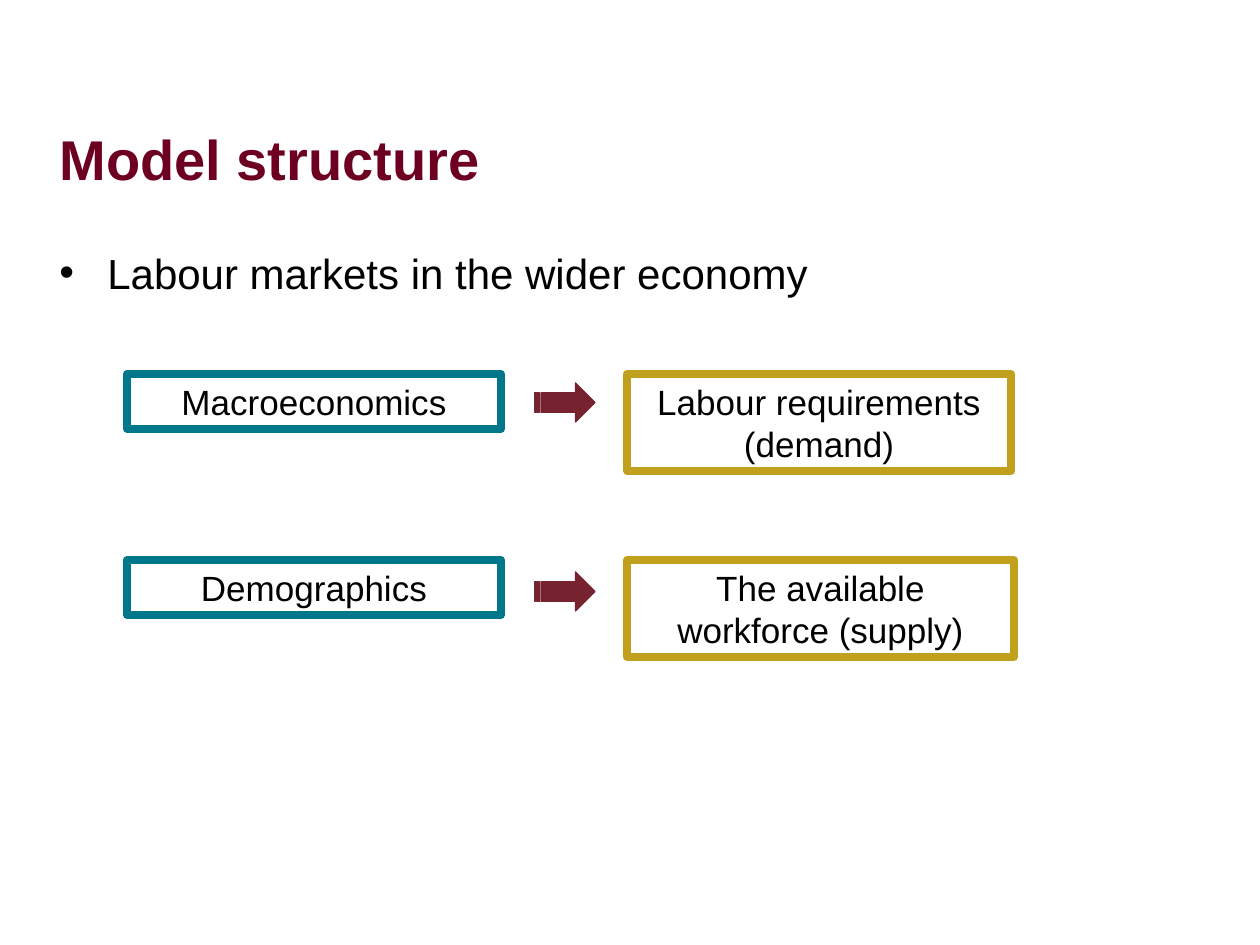
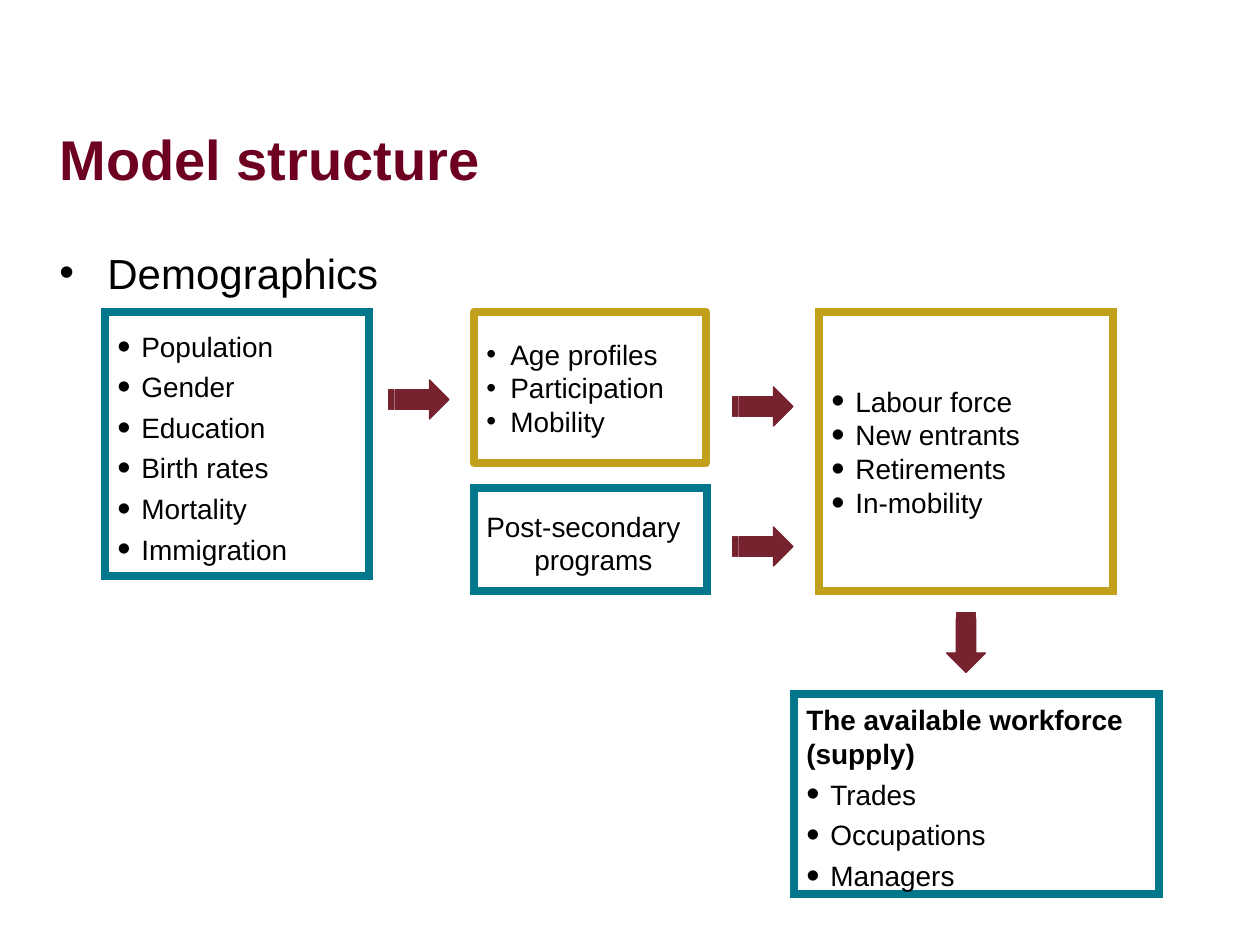
import pptx
import pptx.util
import pptx.dml.color
import pptx.enum.shapes
import pptx.enum.text
import pptx.oxml.ns
from lxml import etree

COLORS = {"title": "6D0020", "text": "000000", "arrow": "76232F",
          "teal": "00778B", "gold": "C1A01E", "white": "FFFFFF"}
FONT = "Arial"
EMU_PER_PX = 914400 / 126
ARROW_W, ARROW_H = 60, 39
TITLE_BOX = (47, 79, 1134, 158)
BODY_BOX = (47, 241, 1134, 619)
BIG_BULLET = {"indent": 24, "bullet": 135}
TIGHT_BULLET = {"indent": 24, "bullet": 100, "spacing": 0.8}
TIGHT_BIG_BULLET = {**BIG_BULLET, "spacing": 0.8}
CENTERED = {"align": pptx.enum.text.PP_ALIGN.CENTER}


def items(style, *texts):
    return [(text, style) for text in texts]


def label(box, color, text):
    return {"box": box, "color": color, "size": 20, "paras": items(CENTERED, text),
            "grow": True}


def panel(box, color, paras, miter=True):
    return {"box": box, "color": color, "size": 16, "paras": paras, "miter": miter}


SLIDES = [
    {"title": "Model structure",
     "topic": "Labour markets in the wider economy",
     "arrows": [(535, 383, 0), (535, 572, 0)],
     "boxes": [
         label((127, 374, 374, 55), "teal", "Macroeconomics"),
         label((127, 560, 374, 55), "teal", "Demographics"),
         label((627, 374, 384, 97), "gold", "Labour requirements (demand)"),
         label((627, 560, 387, 97), "gold", "The available workforce (supply)"),
     ]},
    {"title": "Model structure",
     "topic": "Demographics",
     "arrows": [(389, 380, 0), (733, 387, 0), (733, 527, 0), (936, 623, 90)],
     "boxes": [
         panel((105, 312, 264, 264), "teal",
               items(BIG_BULLET, "Population", "Gender", "Education",
                     "Birth rates", "Mortality", "Immigration")),
         panel((474, 312, 232, 151), "gold",
               items(TIGHT_BULLET, "Age profiles", "Participation", "Mobility"),
               miter=False),
         panel((819, 312, 294, 279), "gold",
               items(TIGHT_BIG_BULLET, "Labour force", "New entrants",
                     "Retirements", "In-mobility")),
         panel((474, 488, 233, 103), "teal",
               items({"indent": 48}, "Post-secondary programs")),
         panel((794, 694, 365, 200), "teal",
               items({"bold": True}, "The available workforce (supply)")
               + items(BIG_BULLET, "Trades", "Occupations", "Managers")),
     ]},
]


def px(n):
    return pptx.util.Emu(round(n * EMU_PER_PX))


def rgb(name):
    return pptx.dml.color.RGBColor.from_string(COLORS[name])


def add_element(parent, tag, **attrs):
    return etree.SubElement(parent, pptx.oxml.ns.qn(tag), **attrs)


def add_bullet(pPr, percent):
    clr = add_element(pPr, "a:buClr")
    add_element(clr, "a:srgbClr", val=COLORS["text"])
    add_element(pPr, "a:buSzPct", val=str(percent * 1000))
    add_element(pPr, "a:buFont", typeface=FONT)
    add_element(pPr, "a:buChar", char="•")


def write(tf, paras, size, color="text"):
    for i, (text, style) in enumerate(paras):
        p = tf.add_paragraph() if i else tf.paragraphs[0]
        pPr = p._p.get_or_add_pPr()
        indent = style.get("indent", 0)
        pPr.set("marL", str(px(indent)))
        pPr.set("indent", str(px(-indent)))
        if "bullet" in style:
            add_bullet(pPr, style["bullet"])
        p.alignment = style.get("align", pptx.enum.text.PP_ALIGN.LEFT)
        p.line_spacing = style.get("spacing", 1.0)
        p.space_before = pptx.util.Pt(4 if i else 0)
        r = p.add_run()
        r.text = text
        r.font.name = FONT
        r.font.size = pptx.util.Pt(size)
        r.font.bold = style.get("bold", False)
        r.font.color.rgb = rgb(color)


def add_header(s, title, topic):
    sp = s.shapes.title
    sp.left, sp.top, sp.width, sp.height = map(px, TITLE_BOX)
    sp.text_frame.vertical_anchor = pptx.enum.text.MSO_ANCHOR.MIDDLE
    write(sp.text_frame, items({"bold": True}, title), 32, "title")
    tf = s.shapes.add_textbox(*map(px, BODY_BOX)).text_frame
    tf.word_wrap = True
    write(tf, items({"indent": 48, "bullet": 100}, topic), 24)


def add_arrow(s, x, y, rotation):
    kind = pptx.enum.shapes.MSO_SHAPE.STRIPED_RIGHT_ARROW
    sp = s.shapes.add_shape(kind, px(x), px(y), px(ARROW_W), px(ARROW_H))
    sp.rotation = rotation
    sp.shadow.inherit = False
    sp.fill.solid()
    sp.fill.fore_color.rgb = rgb("arrow")
    sp.line.color.rgb = rgb("arrow")
    sp.line.width = pptx.util.Pt(0.75)


def add_box(s, box, color, size, paras, grow=False, miter=False):
    kind = pptx.enum.shapes.MSO_SHAPE.RECTANGLE
    sp = s.shapes.add_shape(kind, *map(px, box))
    sp.shadow.inherit = False
    sp.line.color.rgb = rgb(color)
    sp.line.width = pptx.util.Pt(4.5)
    if miter:
        add_element(sp.line._get_or_add_ln(), "a:miter", lim="800000")
    tf = sp.text_frame
    tf.word_wrap = True
    if grow:
        sp.fill.background()
        tf.vertical_anchor = pptx.enum.text.MSO_ANCHOR.TOP
        tf.auto_size = pptx.enum.text.MSO_AUTO_SIZE.SHAPE_TO_FIT_TEXT
    else:
        sp.fill.solid()
        sp.fill.fore_color.rgb = rgb("white")
        tf.vertical_anchor = pptx.enum.text.MSO_ANCHOR.MIDDLE
        tf.margin_top = px(13)
    write(tf, paras, size)


def main():
    prs = pptx.Presentation()
    prs.slide_width, prs.slide_height = px(1260), px(945)
    for content in SLIDES:
        s = prs.slides.add_slide(prs.slide_layouts[5])
        add_header(s, content["title"], content["topic"])
        for arrow in content["arrows"]:
            add_arrow(s, *arrow)
        for box in content["boxes"]:
            add_box(s, **box)
    prs.save("out.pptx")


if __name__ == "__main__":
    main()
